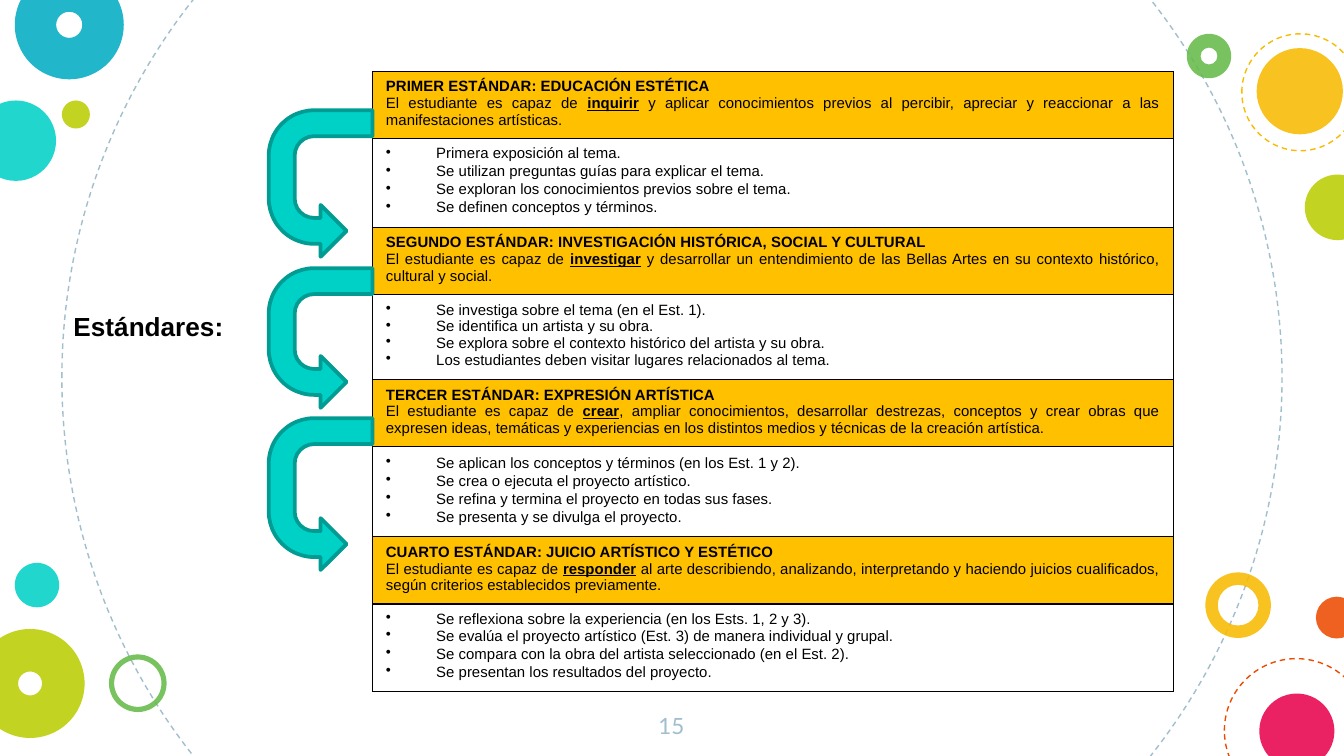
import pptx
import pptx.util
import pptx.dml.color
import pptx.enum.dml
import pptx.enum.shapes
import pptx.enum.text
import pptx.oxml
import pptx.oxml.ns

Cm = pptx.util.Cm
Pt = pptx.util.Pt
RGB = pptx.dml.color.RGBColor
KIND = pptx.enum.shapes.MSO_SHAPE
ALIGN = pptx.enum.text.PP_ALIGN
NS = pptx.oxml.ns.nsdecls("a")

BLACK = RGB(0x00, 0x00, 0x00)
GOLD = RGB(0xFF, 0xC0, 0x00)
MIST = RGB(0xA1, 0xBE, 0xCC)
AQUA = RGB(0x00, 0xD1, 0xC6)
TEAL = RGB(0x00, 0x9B, 0x92)
BLUE = RGB(0x00, 0xAC, 0xC3)
AMBER = RGB(0xF8, 0xBB, 0x00)
LIME = RGB(0xBB, 0xCD, 0x00)
GREEN = RGB(0x65, 0xBB, 0x48)
RUST = RGB(0xED, 0x4A, 0x00)
PINK = RGB(0xE8, 0x00, 0x4C)

DISC, RING, DASH = "disc", "ring", "dash"
CIRCLES = [
    (DASH, 1.17, -4.39, 23.06, MIST, 0),
    (DISC, -0.46, 1.9, 1.52, AQUA, 0),
    (RING, 22.78, 10.82, 1.24, AMBER, 0.19),
    (RING, 0.28, -0.56, 2.06, BLUE, 0.38),
    (DISC, 1.17, 1.9, 0.53, LIME, 0),
    (DASH, 23.14, 12.45, 2.72, RUST, 0),
    (RING, 2.06, 12.37, 1.09, GREEN, 0.09),
    (DISC, 24.87, 11.28, 0.79, RUST, 0),
    (RING, -0.46, 11.89, 2.06, LIME, 0.39),
    (DISC, 23.8, 13.11, 1.42, PINK, 0),
    (RING, 22.43, 0.64, 0.84, GREEN, 0.31),
    (DISC, 23.75, 0.91, 1.63, AMBER, 0),
    (DISC, 24.66, 3.3, 1.24, LIME, 0),
    (DASH, 23.47, 0.64, 2.21, AMBER, 0),
    (DISC, 0.28, 10.64, 0.84, AQUA, 0),
]

LEAD = "El estudiante es capaz de "
HEAD_TALL = 1.27
# Each entry: title, verb, rest, items, first loosely spaced item, height
NORMS = [
    ("PRIMER ESTÁNDAR: EDUCACIÓN ESTÉTICA", "inquirir",
     " y aplicar conocimientos previos al percibir, apreciar y reaccionar a las "
     "manifestaciones artísticas.",
     ["Primera exposición al tema.",
      "Se utilizan preguntas guías para explicar el tema.",
      "Se exploran los conocimientos previos sobre el tema.",
      "Se definen conceptos y términos."], 1, 1.68),
    ("SEGUNDO ESTÁNDAR: INVESTIGACIÓN HISTÓRICA, SOCIAL Y CULTURAL", "investigar",
     " y desarrollar un entendimiento de las Bellas Artes en su contexto histórico, "
     "cultural y social.",
     ["Se investiga sobre el tema (en el Est. 1).",
      "Se identifica un artista y su obra.",
      "Se explora sobre el contexto histórico del artista y su obra.",
      "Los estudiantes deben visitar lugares relacionados al tema."], 4, 1.6),
    ("TERCER ESTÁNDAR: EXPRESIÓN ARTÍSTICA", "crear",
     ", ampliar conocimientos, desarrollar destrezas, conceptos y crear obras que "
     "expresen ideas, temáticas y experiencias en los distintos medios y técnicas "
     "de la creación artística.",
     ["Se aplican los conceptos y términos (en los Est. 1 y 2).",
      "Se crea o ejecuta el proyecto artístico.",
      "Se refina y termina el proyecto en todas sus fases.",
      "Se presenta y se divulga el proyecto."], 0, 1.7),
    ("CUARTO ESTÁNDAR: JUICIO ARTÍSTICO Y ESTÉTICO", "responder",
     " al arte describiendo, analizando, interpretando y haciendo juicios "
     "cualificados, según criterios establecidos previamente.",
     ["Se reflexiona sobre la experiencia (en los Ests. 1, 2 y 3).",
      "Se evalúa el proyecto artístico (Est. 3) de manera individual y grupal.",
      "Se compara con la obra del artista seleccionado (en el Est. 2).",
      "Se presentan los resultados del proyecto."], 2, 1.66),
]


def set_font(para, size, color=BLACK, name="Arial", bold=False):
    font = para.font
    font.size, font.name, font.bold = Pt(size), name, bold
    font.color.rgb = color


def add_circle(slide, kind, left, top, size, color, hole):
    form = KIND.DONUT if kind == RING else KIND.OVAL
    shape = slide.shapes.add_shape(form, Cm(left), Cm(top), Cm(size), Cm(size))
    shape.shadow.inherit = False
    if kind == DASH:
        shape.fill.background()
        shape.line.color.rgb = color
        shape.line.width = Pt(0.75)
        shape.line.dash_style = pptx.enum.dml.MSO_LINE.DASH
        return
    if kind == RING:
        shape.adjustments[0] = hole
    shape.fill.solid()
    shape.fill.fore_color.rgb = color
    tint = shape.fill._xPr.find(".//" + pptx.oxml.ns.qn("a:srgbClr"))
    tint.append(pptx.oxml.parse_xml(f'<a:alpha {NS} val="87000"/>'))
    shape.line.fill.background()


def add_label(slide, text, left, top, width, height, **style):
    box = slide.shapes.add_textbox(Cm(left), Cm(top), Cm(width), Cm(height))
    box.text_frame.word_wrap = True
    para = box.text_frame.paragraphs[0]
    para.text = text
    set_font(para, **style)
    return box.text_frame


def add_arrow(slide, mid, span):
    wide = 1.96
    shape = slide.shapes.add_shape(
        KIND.U_TURN_ARROW, Cm(6.06 - span / 2), Cm(mid - wide / 2), Cm(span), Cm(wide))
    shape.shadow.inherit = False
    shape.rotation = 270
    shape._element.spPr.xfrm.set("flipH", "1")
    shape.fill.solid()
    shape.fill.fore_color.rgb = AQUA
    shape.line.color.rgb = TEAL
    shape.line.width = Pt(2)


def add_edges(cell):
    props = cell._tc.get_or_add_tcPr()
    for side in "LRTB":
        props.append(pptx.oxml.parse_xml(
            f'<a:ln{side} {NS} w="9525"><a:solidFill><a:srgbClr val="{BLACK}"/>'
            f'</a:solidFill></a:ln{side}>'))


def fill_head(cell, title, verb, rest):
    add_edges(cell)
    cell.fill.solid()
    cell.fill.fore_color.rgb = GOLD
    first = cell.text_frame.paragraphs[0]
    first.text = title
    next_para = cell.text_frame.add_paragraph()
    for para, bold in ((first, True), (next_para, False)):
        para.alignment = ALIGN.JUSTIFY
        set_font(para, 8, bold=bold)
    for text in (LEAD, verb, rest):
        run = next_para.add_run()
        run.text = text
        if text == verb:
            run.font.bold = run.font.underline = True


def fill_list(cell, items, loose):
    add_edges(cell)
    cell.fill.background()
    frame = cell.text_frame
    for i, item in enumerate(items):
        para = frame.add_paragraph() if i else frame.paragraphs[0]
        para.text = item
        if i >= loose:
            para.line_spacing = 1.07
        props = para._p.get_or_add_pPr()
        props.set("marL", str(Cm(0.95)))
        props.set("indent", str(Cm(-0.95)))
        for mark in (f'<a:buClr {NS}><a:srgbClr val="{BLACK}"/></a:buClr>',
                     f'<a:buChar {NS} char="•"/>'):
            props.append(pptx.oxml.parse_xml(mark))
        set_font(para, 8)


def add_norms(slide):
    tall = sum(HEAD_TALL + norm[-1] for norm in NORMS)
    table = slide.shapes.add_table(
        2 * len(NORMS), 1, Cm(7.04), Cm(1.35), Cm(15.14), Cm(tall)).table
    table.first_row = table.horz_banding = False
    for i, (title, verb, rest, items, loose, height) in enumerate(NORMS):
        table.rows[2 * i].height = Cm(HEAD_TALL)
        table.rows[2 * i + 1].height = Cm(height)
        fill_head(table.cell(2 * i, 0), title, verb, rest)
        fill_list(table.cell(2 * i + 1, 0), items, loose)


def main():
    deck = pptx.Presentation()
    deck.slide_width, deck.slide_height = Cm(25.4), Cm(14.29)
    slide = deck.slides.add_slide(deck.slide_layouts[6])
    for circle in CIRCLES:
        add_circle(slide, *circle)
    page = add_label(slide, "15", 12.04, 13.21, 1.3, 1.09,
                     size=12, color=MIST, name="Lato")
    page.margin_top = page.margin_bottom = Cm(0.25)
    page.paragraphs[0].alignment = ALIGN.CENTER
    add_label(slide, "Estándares:", 1.14, 5.74, 5, 1.55, size=14, bold=True)
    add_norms(slide)
    for mid, span in ((3.47, 2.77), (6.39, 2.64), (9.34, 2.87)):
        add_arrow(slide, mid, span)
    deck.save("out.pptx")


if __name__ == "__main__":
    main()
